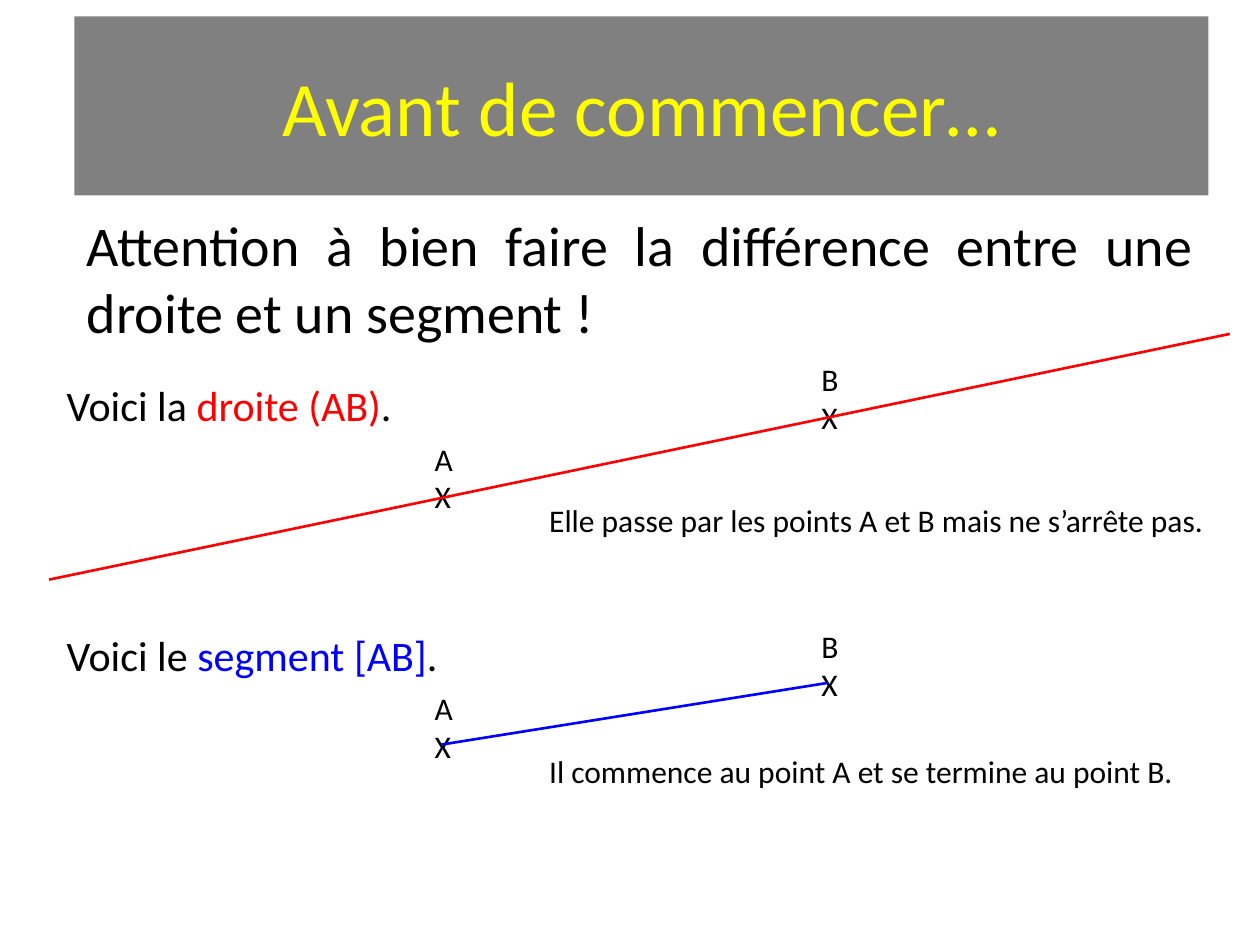
from pptx import Presentation
from pptx.dml.color import RGBColor
from pptx.enum import shapes, text
from pptx.oxml import parse_xml
from pptx.oxml.ns import nsdecls
from pptx.util import Inches, Pt

BLACK = RGBColor(0, 0, 0)
GREY = RGBColor(128, 128, 128)
YELLOW = RGBColor(255, 255, 0)
RED = RGBColor(255, 0, 0)
BLUE = RGBColor(0, 0, 255)
FONT = "Calibri"
LEFT, JUST = text.PP_ALIGN.LEFT, text.PP_ALIGN.JUSTIFY

TITLE = "Avant de commencer…"
INTRO = "Attention à bien faire la différence entre une droite et un segment !"
CASES = [
    {"lead": "Voici la ", "term": "droite (AB)", "color": RED, "top": 2.96,
     "points": [("A", 3.35, 3.44), ("B", 6.42, 2.81)],
     "line": (0.39, 4.6, 9.76, 2.65),
     "note": "Elle passe par les points A et B mais ne s’arrête pas."},
    {"lead": "Voici le ", "term": "segment [AB]", "color": BLUE, "top": 4.95,
     "points": [("A", 3.35, 5.42), ("B", 6.42, 4.93)],
     "line": (3.5, 5.91, 6.57, 5.42),
     "note": "Il commence au point A et se termine au point B."},
]
NOTE_GAP = 0.97


def style(run, size, color=BLACK):
    run.font.name = FONT
    run.font.size = Pt(size)
    run.font.color.rgb = color


def add_text(slide, box, lines, size, align=JUST):
    frame = slide.shapes.add_textbox(*map(Inches, box)).text_frame
    frame.word_wrap = True
    frame.auto_size = text.MSO_AUTO_SIZE.SHAPE_TO_FIT_TEXT
    for i, parts in enumerate(lines):
        para = frame.add_paragraph() if i else frame.paragraphs[0]
        para.alignment = align
        for words, color in parts:
            run = para.add_run()
            run.text = words
            style(run, size, color)


def add_line(slide, ends, color):
    line = slide.shapes.add_connector(
        shapes.MSO_CONNECTOR.STRAIGHT, *map(Inches, ends))
    line.line.color.rgb = color
    line.line.width = Pt(1.5)
    props = line._element.spPr
    props.append(parse_xml(f"<a:effectLst {nsdecls('a')}/>"))


def add_title(slide):
    title = slide.shapes.title
    title.left, title.top = Inches(0.59), Inches(0.13)
    title.width, title.height = Inches(9), Inches(1.42)
    title.fill.solid()
    title.fill.fore_color.rgb = GREY
    frame = title.text_frame
    frame.text = TITLE
    frame.vertical_anchor = text.MSO_ANCHOR.MIDDLE
    para = frame.paragraphs[0]
    para.alignment = text.PP_ALIGN.CENTER
    style(para.runs[0], 44, YELLOW)


def add_case(slide, case):
    color, top = case["color"], case["top"]
    lead = [(case["lead"], BLACK), (case["term"], color), (".", BLACK)]
    add_text(slide, (0.43, top, 9.37, 0.5), [lead], 24)
    for name, x, y in case["points"]:
        marks = [[(name, BLACK)], [("X", BLACK)]]
        add_text(slide, (x, y, 0.55, 0.71), marks, 18, LEFT)
    add_line(slide, case["line"], color)
    add_text(slide, (4.26, top + NOTE_GAP, 5.51, 0.4),
             [[(case["note"], BLACK)]], 18)


def main():
    deck = Presentation()
    deck.slide_width, deck.slide_height = Inches(10), Inches(7.5)
    slide = deck.slides.add_slide(deck.slide_layouts[5])
    add_title(slide)
    add_text(slide, (0.59, 1.62, 8.98, 1.18), [[(INTRO, BLACK)]], 32)
    for case in CASES:
        add_case(slide, case)
    deck.save("out.pptx")


if __name__ == "__main__":
    main()
